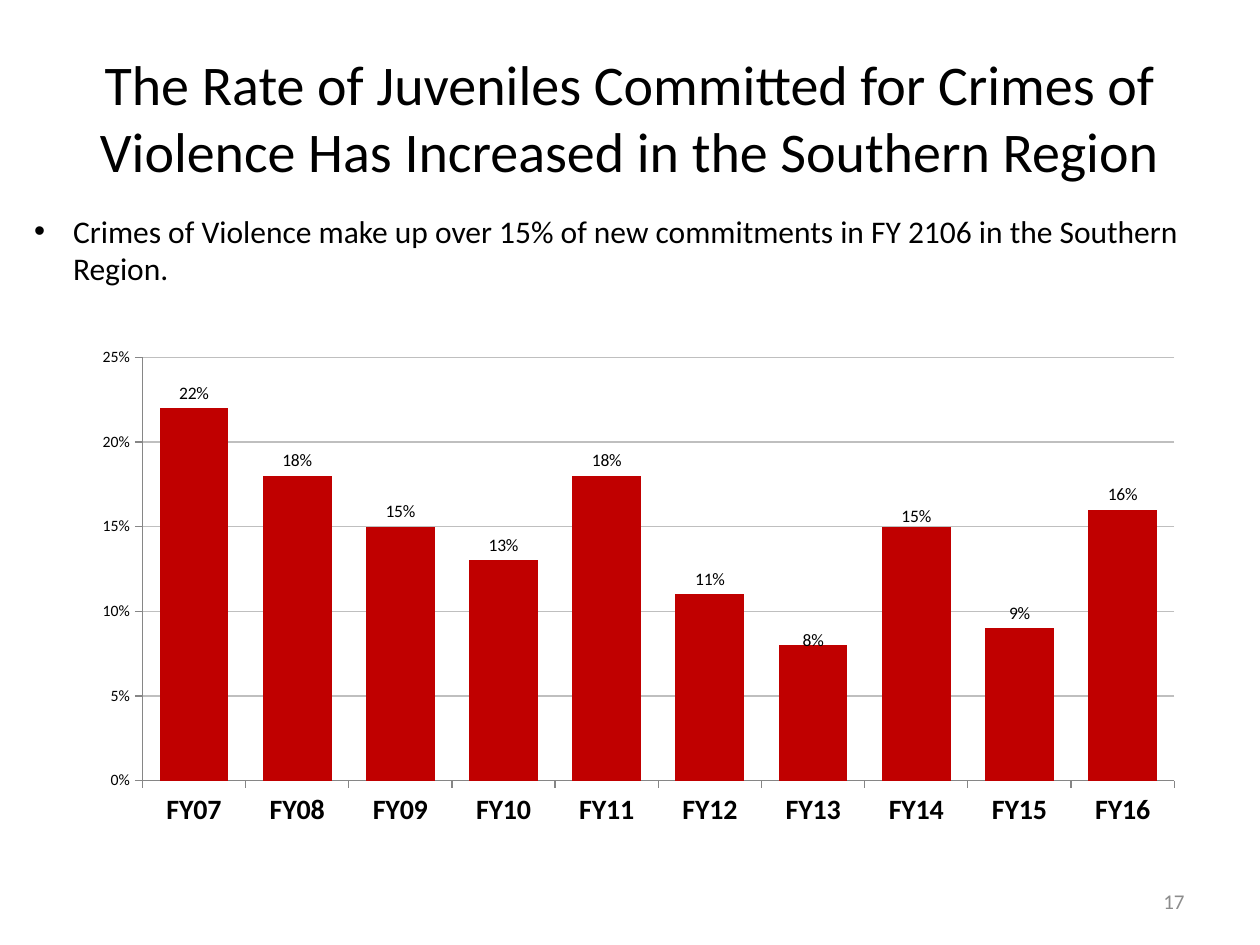
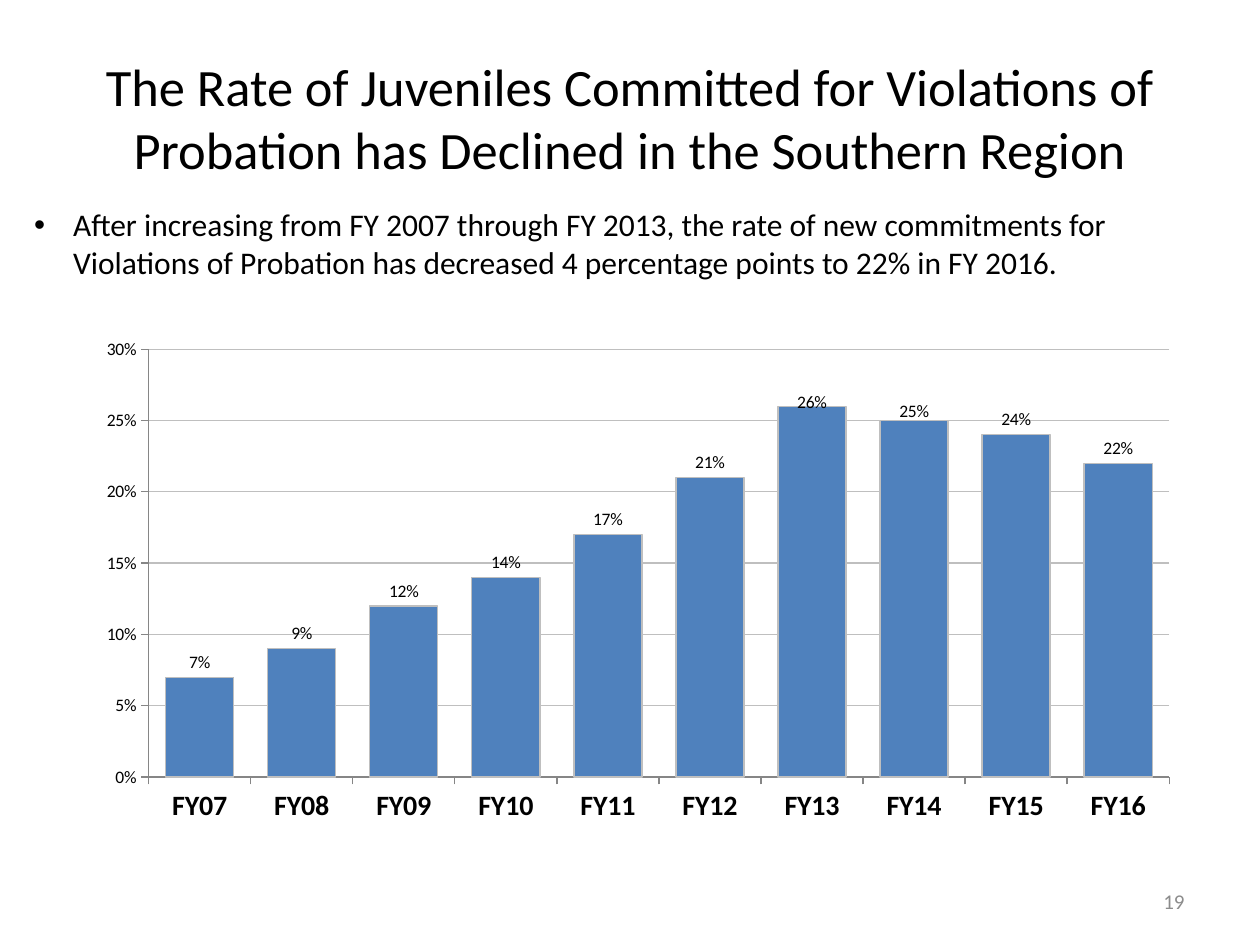
from dataclasses import dataclass

from lxml import etree
from pptx import Presentation
from pptx.chart.data import CategoryChartData
from pptx.dml.color import RGBColor
from pptx.enum.chart import XL_CHART_TYPE, XL_LABEL_POSITION, XL_TICK_MARK
from pptx.enum.text import MSO_ANCHOR, MSO_AUTO_SIZE, PP_ALIGN
from pptx.oxml.ns import qn
from pptx.util import Inches, Pt

COLUMN = XL_CHART_TYPE.COLUMN_CLUSTERED
OUT_END = XL_LABEL_POSITION.OUTSIDE_END
TICK_OUT = XL_TICK_MARK.OUTSIDE
MIDDLE, TOP = MSO_ANCHOR.MIDDLE, MSO_ANCHOR.TOP
NO_FIT = MSO_AUTO_SIZE.NONE
CENTER, LEFT, RIGHT = PP_ALIGN.CENTER, PP_ALIGN.LEFT, PP_ALIGN.RIGHT

FONT = "Calibri"
COLORS = {"text": "000000", "page": "8C8C8C", "grid": "BFBFBF",
          "axis": "868686", "red": "C00000", "blue": "4F81BD"}
YEARS = [f"FY{year:02d}" for year in range(7, 17)]
TITLE_BOX = (0.5, 0.3, 9, 1.25)
PAGE_BOX = (7.17, 6.95, 2.33, 0.4)
INDENT = Inches(0.31)


@dataclass(frozen=True)
class Graph:
    box: tuple
    plot: tuple
    rates: tuple
    top: float
    fill: str
    edge: bool
    scale_size: int
    shifts: dict


@dataclass(frozen=True)
class Page:
    title: str
    size: int
    note: str
    note_top: float
    number: int
    graph: Graph


PAGES = (
    Page("The Rate of Juveniles Committed for Crimes of Violence Has Increased "
         "in the Southern Region", 32,
         "Crimes of Violence make up over 15% of new commitments in FY 2106 "
         "in the Southern Region.", 1.63, 17,
         Graph((0.5, 2.5, 9, 4.2), (0.07, 0.08, 0.91, 0.8),
               (0.22, 0.18, 0.15, 0.13, 0.18, 0.11, 0.08, 0.15, 0.09, 0.16),
               0.25, "red", False, 9, {6: 0.02, 7: 0.01})),
    Page("The Rate of Juveniles Committed for Violations of Probation has "
         "Declined in the Southern Region", 30,
         "After increasing from FY 2007 through FY 2013, the rate of new "
         "commitments for Violations of Probation has decreased 4 percentage "
         "points to 22% in FY 2016.", 1.58, 19,
         Graph((0.46, 2.42, 9, 4.41), (0.08, 0.08, 0.9, 0.77),
               (0.07, 0.09, 0.12, 0.14, 0.17, 0.21, 0.26, 0.25, 0.24, 0.22),
               0.3, "blue", True, 10, {6: 0.02, 7: 0.01})),
)


def color(name: str) -> RGBColor:
    return RGBColor.from_string(COLORS[name])


def style(font, size: int, name: str = "text", bold: bool = False) -> None:
    font.name, font.size, font.bold = FONT, Pt(size), bold
    font.color.rgb = color(name)


def write(shape, box: tuple, text: str, size: int, align,
          anchor=MIDDLE, name: str = "text"):
    shape.left, shape.top, shape.width, shape.height = map(Inches, box)
    frame = shape.text_frame
    frame.text = text
    frame.word_wrap, frame.auto_size = True, NO_FIT
    frame.vertical_anchor = anchor
    para = frame.paragraphs[0]
    para.alignment, para.space_before = align, Pt(0)
    style(para.font, size, name)
    return para


def layout(**parts) -> etree.Element:
    node = etree.Element(qn("c:layout"))
    manual = etree.SubElement(node, qn("c:manualLayout"))
    for key, value in parts.items():
        etree.SubElement(manual, qn(f"c:{key}")).set("val", str(value))
    return node


def set_plot(chart, plot: tuple) -> None:
    area = chart.element.find(".//" + qn("c:plotArea"))
    for old in area.findall(qn("c:layout")):
        area.remove(old)
    left, top, width, height = plot
    area.insert(0, layout(layoutTarget="inner", xMode="edge", yMode="edge",
                          x=left, y=top, w=width, h=height))


def set_axis(axis, size: int, bold: bool) -> None:
    axis.major_tick_mark = TICK_OUT
    axis.format.line.color.rgb = color("axis")
    style(axis.tick_labels.font, size, bold=bold)


def set_scale(axis, top: float) -> None:
    axis.minimum_scale, axis.maximum_scale, axis.major_unit = 0, top, 0.05
    axis.tick_labels.number_format = "0%"
    axis.tick_labels.number_format_is_linked = False
    line = axis.major_gridlines.format.line
    line.color.rgb, line.width = color("grid"), Pt(0.75)


def set_labels(series, shifts: dict) -> None:
    labels = series.data_labels
    labels.show_value, labels.position = True, OUT_END
    labels.number_format, labels.number_format_is_linked = "0%", False
    style(labels.font, 10)
    for index, shift in shifts.items():
        label = series.points[index].data_label
        label.position = OUT_END
        style(label.font, 10)
    for node in labels._element.findall(qn("c:dLbl")):
        mark = node.find(qn("c:idx"))
        mark.addnext(layout(x=0, y=shifts[int(mark.get("val"))]))


def add_graph(slide, graph: Graph) -> None:
    data = CategoryChartData(number_format="0%")
    data.categories = YEARS
    data.add_series("Series 1", graph.rates)
    chart = slide.shapes.add_chart(COLUMN, *map(Inches, graph.box), data).chart
    chart.has_legend = chart.has_title = False
    style(chart.font, 10)
    set_plot(chart, graph.plot)
    set_axis(chart.category_axis, 16, True)
    set_axis(chart.value_axis, graph.scale_size, False)
    set_scale(chart.value_axis, graph.top)
    bars = chart.plots[0]
    bars.gap_width, bars.vary_by_categories = 50, False
    series = bars.series[0]
    series.format.fill.solid()
    series.format.fill.fore_color.rgb = color(graph.fill)
    if graph.edge:
        series.format.line.color.rgb = color("grid")
        series.format.line.width = Pt(0.75)
    set_labels(series, graph.shifts)


def add_page(deck, page: Page) -> None:
    slide = deck.slides.add_slide(deck.slide_layouts[1])
    write(slide.shapes.title, TITLE_BOX, page.title, page.size, CENTER)
    note = write(slide.placeholders[1], (0.17, page.note_top, 9.58, 0.71),
                 page.note, 18, LEFT, TOP)
    props = note._p.get_or_add_pPr()
    props.set("marL", str(INDENT))
    props.set("indent", str(-INDENT))
    number = slide.shapes.add_textbox(*map(Inches, PAGE_BOX))
    write(number, PAGE_BOX, str(page.number), 12, RIGHT, name="page")
    add_graph(slide, page.graph)


def main() -> None:
    deck = Presentation()
    deck.slide_width, deck.slide_height = Inches(10), Inches(7.5)
    for page in PAGES:
        add_page(deck, page)
    deck.save("out.pptx")


if __name__ == "__main__":
    main()
